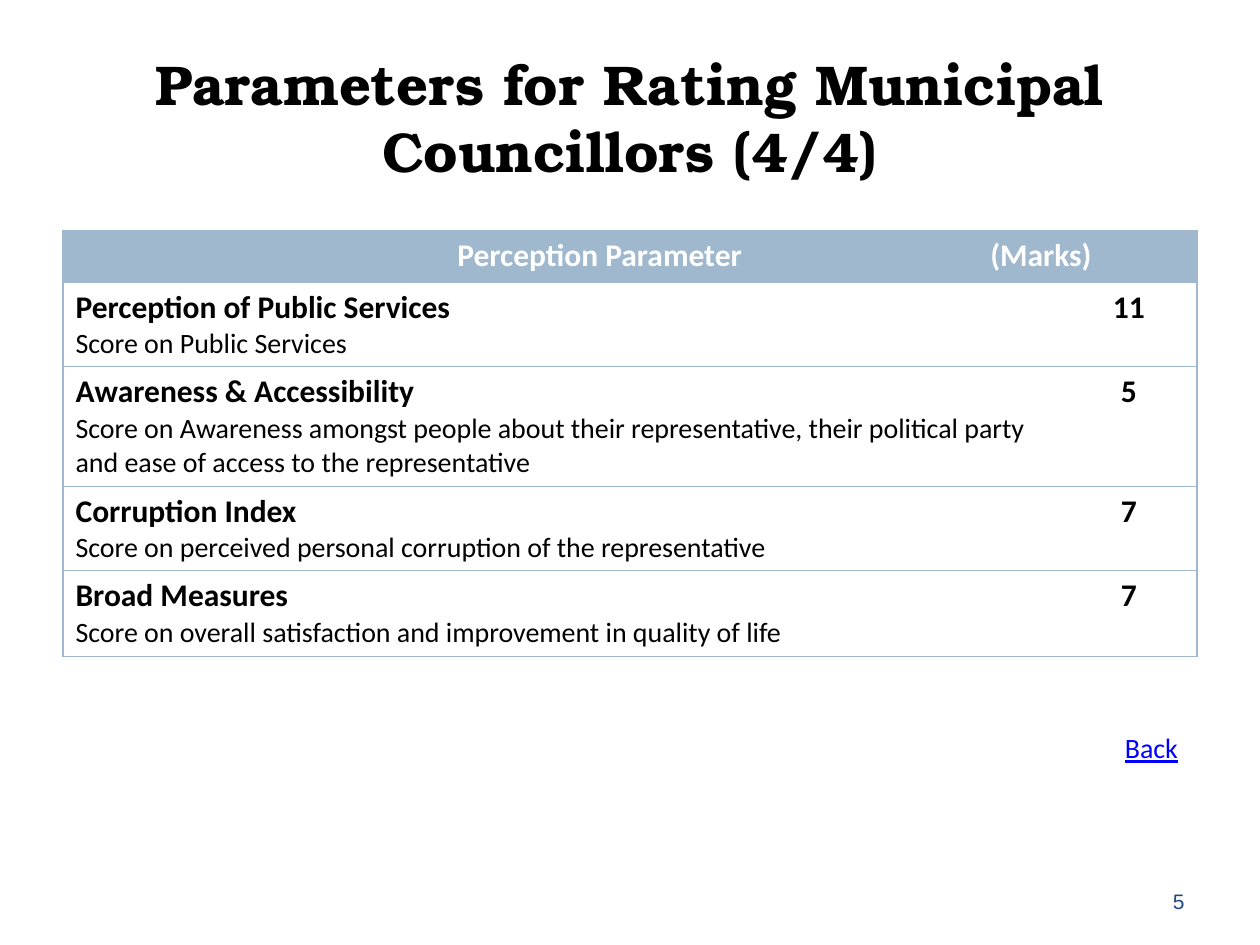
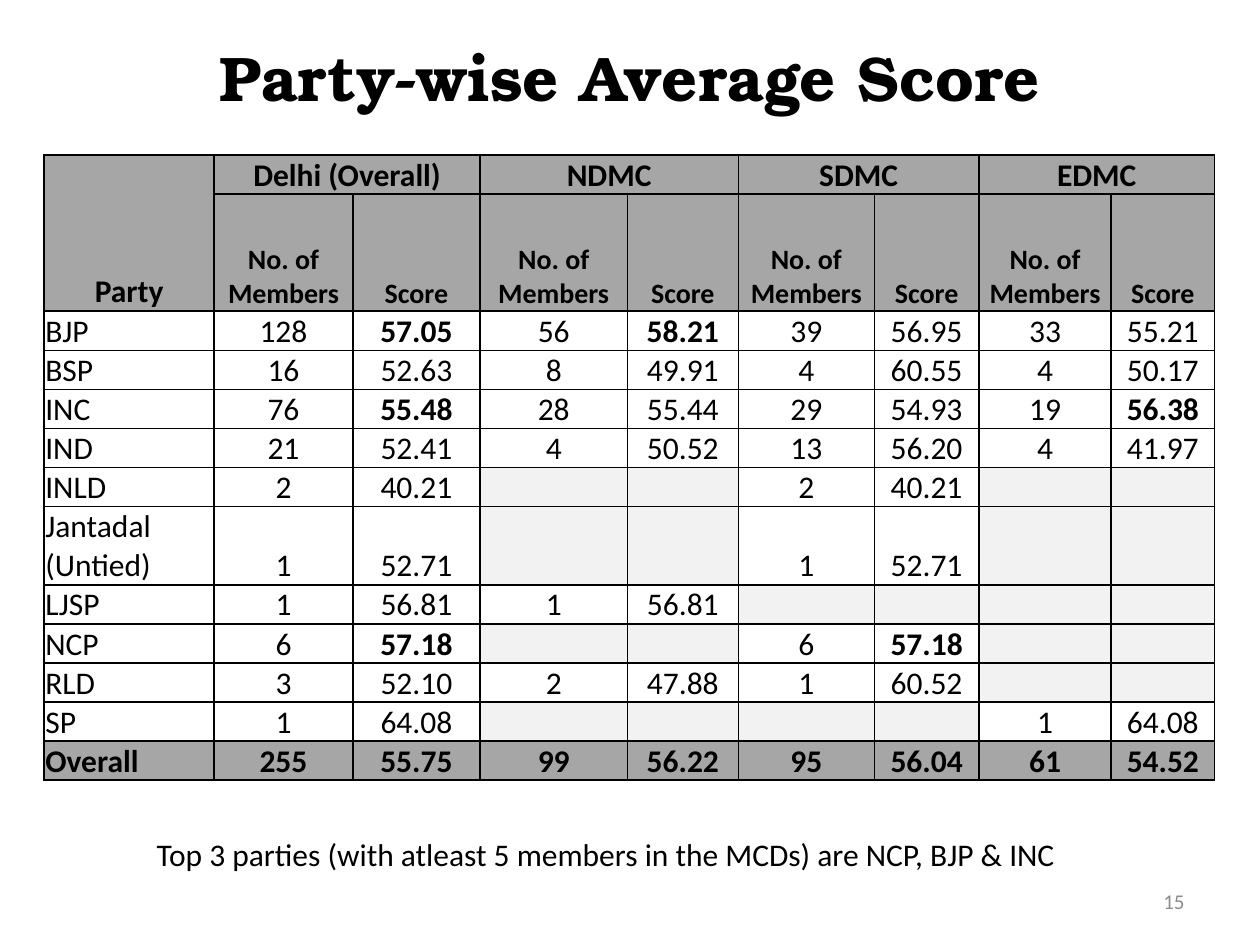
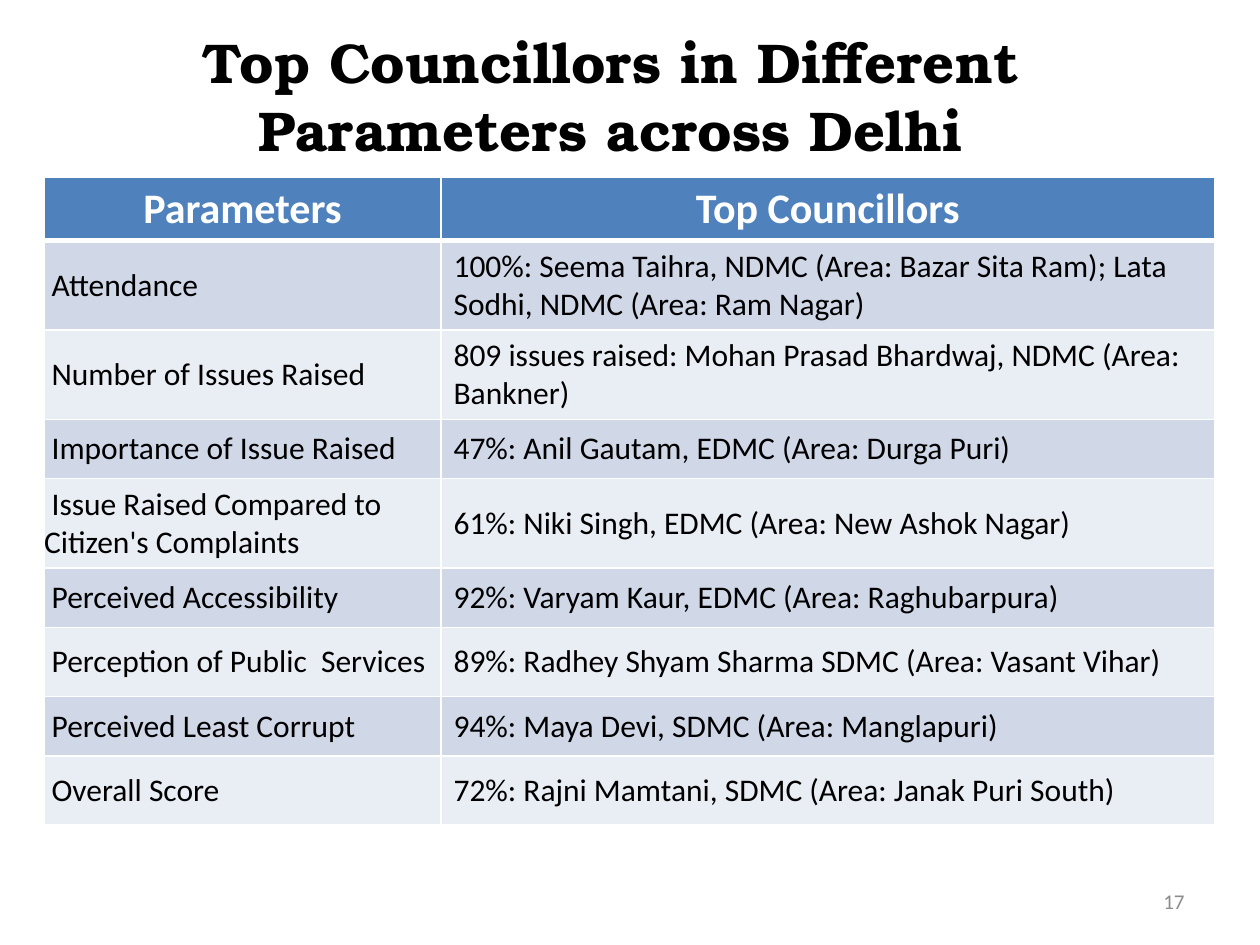
from dataclasses import dataclass

from pptx import Presentation
from pptx.dml.color import RGBColor
from pptx.enum.text import MSO_ANCHOR, PP_ALIGN
from pptx.oxml.ns import qn
from pptx.util import Inches, Pt
from lxml.etree import SubElement


@dataclass(frozen=True)
class Theme:
    title_font: str = "TeX Gyre Bonum"
    body_font: str = "Calibri"
    number_font: str = "Arial"
    black: str = "000000"
    white: str = "FFFFFF"
    navy: str = "1F497D"
    number_gray: str = "8C8C8C"
    link: str = "0000FF"
    steel: str = "9FB8CD"
    header_gray: str = "A6A6A6"
    empty_gray: str = "F2F2F2"
    header_blue: str = "4F81BD"
    bands: tuple = ("D0D8E8", "E9EDF4")
    title_large: int = 36
    title: int = 32
    heading: int = 24
    body: int = 18
    detail: int = 16
    number: int = 12


T = Theme()
LEFT, CENTER, RIGHT = PP_ALIGN.LEFT, PP_ALIGN.CENTER, PP_ALIGN.RIGHT
TIGHT = (0.01, 0.01, 0.01, 0)
NORMAL = (0.1, 0.05, 0.1, 0.05)
FLUSH = (0, 0, 0, 0)
NO_STYLE_NO_GRID = "{2D5ABB26-0587-4C30-8999-92F81FD0307C}"

PERCEPTIONS = [
    ("Perception of Public Services", "Score on Public Services", "11"),
    ("Awareness & Accessibility",
     "Score on Awareness amongst people about their representative, their "
     "political party and ease of access to the representative", "5"),
    ("Corruption Index",
     "Score on perceived personal corruption of the representative", "7"),
    ("Broad Measures",
     "Score on overall satisfaction and improvement in quality of life", "7"),
]

REGIONS = ["Delhi (Overall)", "NDMC", "SDMC", "EDMC"]
PARTY_SCORES = [
    ("BJP", "128", "57.05", "56", "58.21", "39", "56.95", "33", "55.21"),
    ("BSP", "16", "52.63", "8", "49.91", "4", "60.55", "4", "50.17"),
    ("INC", "76", "55.48", "28", "55.44", "29", "54.93", "19", "56.38"),
    ("IND", "21", "52.41", "4", "50.52", "13", "56.20", "4", "41.97"),
    ("INLD", "2", "40.21", "", "", "2", "40.21", "", ""),
    ("Jantadal (Untied)", "1", "52.71", "", "", "1", "52.71", "", ""),
    ("LJSP", "1", "56.81", "1", "56.81", "", "", "", ""),
    ("NCP", "6", "57.18", "", "", "6", "57.18", "", ""),
    ("RLD", "3", "52.10", "2", "47.88", "1", "60.52", "", ""),
    ("SP", "1", "64.08", "", "", "", "", "1", "64.08"),
    ("Overall", "255", "55.75", "99", "56.22", "95", "56.04", "61", "54.52"),
]
TOP_SCORES = {("BJP", 2), ("BJP", 4), ("INC", 2), ("INC", 8), ("NCP", 2), ("NCP", 6)}

TOP_COUNCILLORS = [
    ("Attendance",
     "100%: Seema Taihra, NDMC (Area: Bazar Sita Ram); Lata Sodhi, NDMC (Area: Ram Nagar)"),
    ("Number of Issues Raised",
     "809 issues raised: Mohan Prasad Bhardwaj, NDMC (Area: Bankner)"),
    ("Importance of Issue Raised", "47%: Anil Gautam, EDMC (Area: Durga Puri)"),
    ("Issue Raised Compared to Citizen's Complaints",
     "61%: Niki Singh, EDMC (Area: New Ashok Nagar)"),
    ("Perceived Accessibility", "92%: Varyam Kaur, EDMC (Area: Raghubarpura)"),
    ("Perception of Public  Services",
     "89%: Radhey Shyam Sharma SDMC (Area: Vasant Vihar)"),
    ("Perceived Least Corrupt", "94%: Maya Devi, SDMC (Area: Manglapuri)"),
    ("Overall Score", "72%: Rajni Mamtani, SDMC (Area: Janak Puri South)"),
]


def format_paragraph(p, size, color=T.black, bold=False, align=LEFT, font=T.body_font):
    p.alignment = align
    for r in p.runs:
        r.font.name = font
        r.font.size = Pt(size)
        r.font.bold = bold
        r.font.color.rgb = RGBColor.from_string(color)


def add_text(s, box, text, size, anchor=MSO_ANCHOR.TOP, wrap=True, **style):
    tf = s.shapes.add_textbox(*map(Inches, box)).text_frame
    tf.word_wrap = wrap
    tf.vertical_anchor = anchor
    tf.text = text
    p = tf.paragraphs[0]
    format_paragraph(p, size, **style)
    return p


def add_title(s, box, text, size=T.title):
    add_text(s, box, text, size, MSO_ANCHOR.MIDDLE, bold=True, align=CENTER,
             font=T.title_font)


def add_slide_number(s, number, color=T.number_gray, font=T.body_font):
    add_text(s, (7.17, 6.95, 2.33, 0.4), str(number), T.number, MSO_ANCHOR.MIDDLE,
             color=color, align=RIGHT, font=font)


def add_grid(s, left, top, widths, heights):
    """Add a table without any built-in fills or lines."""
    frame = s.shapes.add_table(len(heights), len(widths), Inches(left), Inches(top),
                               Inches(sum(widths)), Inches(sum(heights)))
    table = frame.table
    table.first_row = table.horz_banding = False
    table._tbl.tblPr.find(qn("a:tableStyleId")).text = NO_STYLE_NO_GRID
    for column, width in zip(table.columns, widths):
        column.width = Inches(width)
    for row, height in zip(table.rows, heights):
        row.height = Inches(height)
    return table


def set_borders(cell, color, **widths):
    """Draw the given sides (L, R, T, B, in that order) at widths in points."""
    tc_pr = cell._tc.get_or_add_tcPr()
    for side, width in widths.items():
        ln = SubElement(tc_pr, qn(f"a:ln{side}"), w=str(Pt(width)))
        fill = SubElement(ln, qn("a:solidFill"))
        SubElement(fill, qn("a:srgbClr"), val=color)


def set_fill(cell, color):
    if color:
        cell.fill.solid()
        cell.fill.fore_color.rgb = RGBColor.from_string(color)
    else:
        cell.fill.background()


def write_cell(cell, text, size=T.body, fill=None, insets=NORMAL,
               anchor=MSO_ANCHOR.TOP, **style):
    set_fill(cell, fill)
    (cell.margin_left, cell.margin_top,
     cell.margin_right, cell.margin_bottom) = map(Inches, insets)
    cell.vertical_anchor = anchor
    cell.text = text
    p = cell.text_frame.paragraphs[0]
    format_paragraph(p, size, **style)
    return p


def set_tabs(p, *positions):
    tabs = SubElement(p._p.get_or_add_pPr(), qn("a:tabLst"))
    for position in positions:
        SubElement(tabs, qn("a:tab"), pos=str(Inches(position)), algn="l")


def add_perception_table(s):
    table = add_grid(s, 0.5, 1.83, [7.92, 1.08], [0.41, 0.67, 0.95, 0.67, 0.68])
    header, header_end = table.rows[0].cells
    for cell in (header, header_end):
        set_borders(cell, T.steel, L=0.75, R=0.75, T=0.75, B=0.75)
        set_fill(cell, T.steel)
    header.merge(header_end)
    p = write_cell(header, "\tPerception Parameter\t(Marks)", fill=T.steel,
                   color=T.white, bold=True)
    set_tabs(p, 3.03, 7.26)
    for i, (name, detail, marks) in enumerate(PERCEPTIONS, 1):
        name_cell, marks_cell = table.rows[i].cells
        set_borders(name_cell, T.steel, L=0.75, T=0.75, B=0.75)
        set_borders(marks_cell, T.steel, R=0.75, T=0.75, B=0.75)
        write_cell(name_cell, name, bold=True)
        p = name_cell.text_frame.add_paragraph()
        p.text = detail
        format_paragraph(p, T.detail)
        write_cell(marks_cell, marks, bold=True, align=CENTER)


def add_party_table(s):
    widths = [1.35, 1.1, 1.01, 1.17, 0.88, 1.08, 0.83, 1.05, 0.82]
    heights = [0.31, 0.93] + [0.62 if row[0].startswith("Jantadal") else 0.31
                              for row in PARTY_SCORES]
    table = add_grid(s, 0.35, 1.23, widths, heights)
    for cell in table.iter_cells():
        set_borders(cell, T.black, L=1, R=1, T=1, B=1)
    tight = dict(insets=TIGHT, anchor=MSO_ANCHOR.BOTTOM)
    header = dict(tight, fill=T.header_gray, bold=True, align=CENTER)

    table.cell(0, 0).merge(table.cell(1, 0))
    write_cell(table.cell(0, 0), "Party", **header)
    for i, region in enumerate(REGIONS):
        col = 1 + 2 * i
        table.cell(0, col).merge(table.cell(0, col + 1))
        write_cell(table.cell(0, col), region, **header)
        write_cell(table.cell(1, col), "No. of Members", T.detail, **header)
        write_cell(table.cell(1, col + 1), "Score", T.detail, **header)

    for i, values in enumerate(PARTY_SCORES, 2):
        party = values[0]
        total = party == "Overall"
        for col, value in enumerate(values):
            fill = T.header_gray if total else None if value else T.empty_gray
            write_cell(table.cell(i, col), value, fill=fill,
                       bold=total or (party, col) in TOP_SCORES,
                       align=CENTER if col else LEFT, **tight)


def add_councillor_table(s):
    heights = [0.49, 0.71, 0.71, 0.47, 0.71, 0.47, 0.55, 0.47, 0.55]
    table = add_grid(s, 0.35, 1.41, [3.15, 6.14], heights)
    for i, row in enumerate(table.rows):
        for cell in row.cells:
            set_borders(cell, T.white, L=1, R=1, T=3 if i == 1 else 1,
                        B=1 if i else 3)
    for col, heading in enumerate(["Parameters", "Top Councillors"]):
        write_cell(table.cell(0, col), heading, T.heading, T.header_blue,
                   color=T.white, bold=True, align=CENTER)
    for i, (parameter, winner) in enumerate(TOP_COUNCILLORS, 1):
        band = dict(fill=T.bands[(i - 1) % 2], anchor=MSO_ANCHOR.MIDDLE)
        p = write_cell(table.cell(i, 0), parameter, insets=FLUSH, **band)
        p._p.get_or_add_pPr().set("indent", str(Inches(0.06)))
        write_cell(table.cell(i, 1), winner, **band)


def main():
    prs = Presentation()
    prs.slide_width, prs.slide_height = Inches(10), Inches(7.5)
    blank = prs.slide_layouts[6]

    s = prs.slides.add_slide(blank)
    add_title(s, (0.5, 0.3, 9, 1.25), "Parameters for Rating Municipal Councillors (4/4)")
    add_slide_number(s, 5, T.navy, T.number_font)
    add_perception_table(s)
    p = add_text(s, (8.83, 5.75, 0.63, 0.37), "Back", T.detail, wrap=False, color=T.link)
    p.runs[0].font.underline = True

    s = prs.slides.add_slide(blank)
    add_title(s, (0.5, 0.3, 9, 0.61), "Party-wise Average Score", T.title_large)
    add_slide_number(s, 15)
    add_party_table(s)
    add_text(s, (0.91, 6.58, 7.8, 0.4),
             "Top 3 parties (with atleast 5 members in the MCDs) are NCP, BJP & INC",
             T.body, align=CENTER)

    s = prs.slides.add_slide(blank)
    add_title(s, (0.35, 0.52, 9, 0.47),
              "Top Councillors in Different Parameters across Delhi")
    add_slide_number(s, 17)
    add_councillor_table(s)

    prs.save("out.pptx")


if __name__ == "__main__":
    main()
